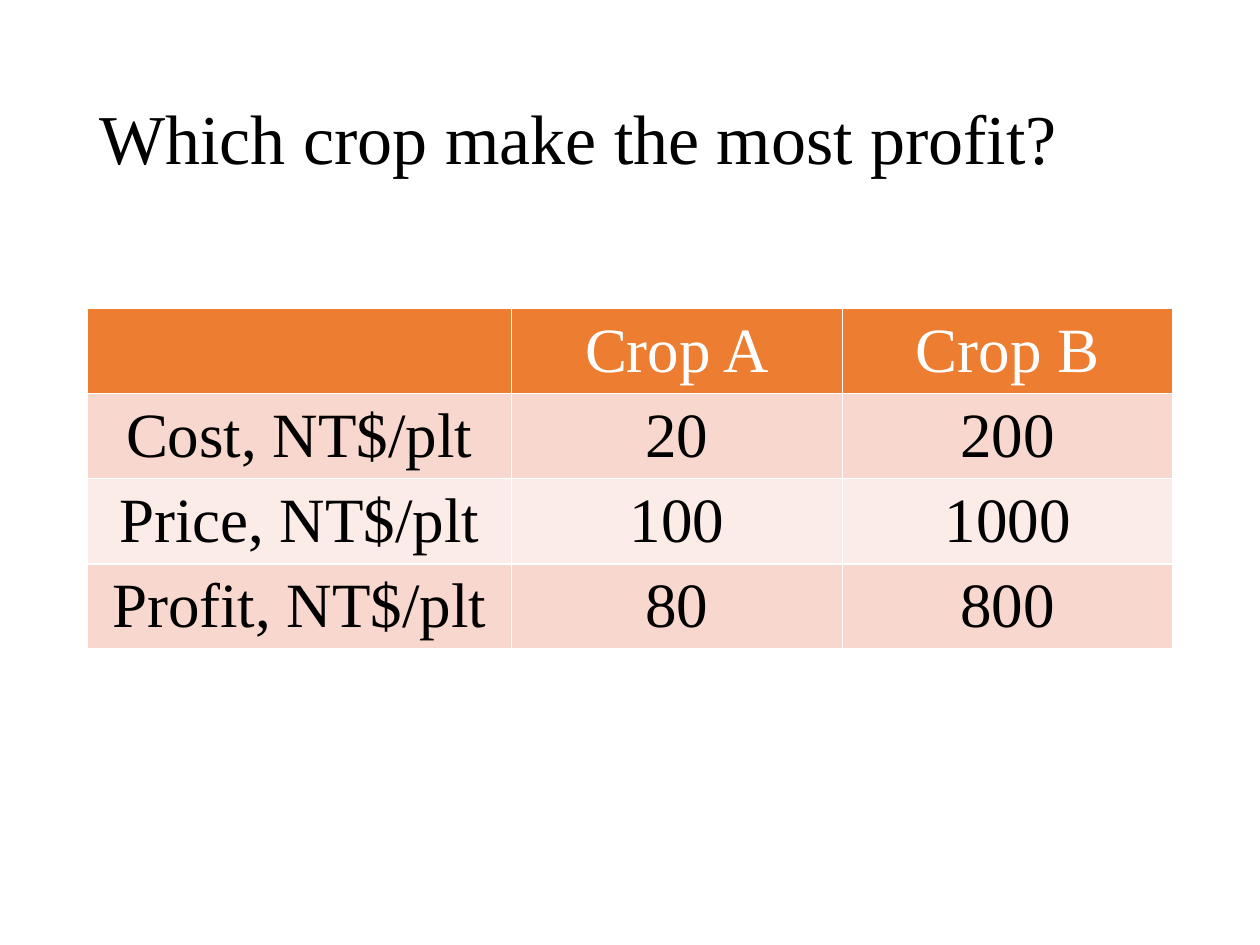
from dataclasses import dataclass

from lxml.etree import SubElement
from pptx import Presentation
from pptx.dml.color import RGBColor
from pptx.enum.text import MSO_ANCHOR, PP_ALIGN
from pptx.oxml.ns import qn
from pptx.util import Inches, Pt

# Content
TITLE = "Which crop make the most profit?"
ROWS = [
    ("", "Crop A", "Crop B"),
    ("Cost, NT$/plt", "20", "200"),
    ("Price, NT$/plt", "100", "1000"),
    ("Profit, NT$/plt", "80", "800"),
]


@dataclass(frozen=True)
class Theme:
    font: str = "Times New Roman"
    title_size: int = 40
    cell_size: int = 36
    text: str = "000000"
    header_text: str = "FFFFFF"
    header_fill: str = "ED7D31"
    bands: tuple = ("F8D7CE", "FCECE8")
    border: str = "FFFFFF"
    border_width: int = 1


THEME = Theme()

# Layout, in inches
WIDTH, HEIGHT = 10, 7.5
MARGIN = 0.69
CONTENT_WIDTH = WIDTH - 2 * MARGIN
TITLE_TOP, TITLE_HEIGHT = 0.4, 1.45
TABLE_TOP, ROW_HEIGHT = 2.45, 0.675
LABEL_WIDTH = 3.37


def style_font(font, size, color):
    font.name = THEME.font
    font.size = Pt(size)
    font.bold = False
    font.color.rgb = RGBColor.from_string(color)


def add_borders(cell):
    properties = cell._tc.get_or_add_tcPr()
    for side in ("a:lnL", "a:lnR", "a:lnT", "a:lnB"):
        line = SubElement(properties, qn(side), w=str(Pt(THEME.border_width)))
        fill = SubElement(line, qn("a:solidFill"))
        SubElement(fill, qn("a:srgbClr"), val=THEME.border)


def style_cell(cell, text, fill, color):
    add_borders(cell)
    cell.fill.solid()
    cell.fill.fore_color.rgb = RGBColor.from_string(fill)
    cell.vertical_anchor = MSO_ANCHOR.MIDDLE
    cell.margin_left = cell.margin_right = Inches(0.07)
    cell.margin_top = cell.margin_bottom = Inches(0.04)
    cell.text = text
    para = cell.text_frame.paragraphs[0]
    para.alignment = PP_ALIGN.CENTER
    style_font(para.font, THEME.cell_size, color)


def add_title(slide):
    title = slide.shapes.title
    title.left, title.top = Inches(MARGIN), Inches(TITLE_TOP)
    title.width, title.height = Inches(CONTENT_WIDTH), Inches(TITLE_HEIGHT)
    title.text_frame.text = TITLE
    title.text_frame.vertical_anchor = MSO_ANCHOR.MIDDLE
    para = title.text_frame.paragraphs[0]
    para.alignment = PP_ALIGN.LEFT
    para.line_spacing = 0.9
    style_font(para.font, THEME.title_size, THEME.text)


def add_crop_table(slide):
    column_count = len(ROWS[0])
    table = slide.shapes.add_table(
        len(ROWS), column_count, Inches(MARGIN), Inches(TABLE_TOP),
        Inches(CONTENT_WIDTH), Inches(ROW_HEIGHT * len(ROWS))).table
    value_width = (CONTENT_WIDTH - LABEL_WIDTH) / (column_count - 1)
    for index, column in enumerate(table.columns):
        column.width = Inches(value_width if index else LABEL_WIDTH)
    for row_index, values in enumerate(ROWS):
        if row_index == 0:
            fill, color = THEME.header_fill, THEME.header_text
        else:
            fill, color = THEME.bands[(row_index - 1) % 2], THEME.text
        for column_index, value in enumerate(values):
            style_cell(table.cell(row_index, column_index), value, fill, color)


def main():
    deck = Presentation()
    deck.slide_width, deck.slide_height = Inches(WIDTH), Inches(HEIGHT)
    slide = deck.slides.add_slide(deck.slide_layouts[5])
    add_title(slide)
    add_crop_table(slide)
    deck.save("out.pptx")


if __name__ == "__main__":
    main()
